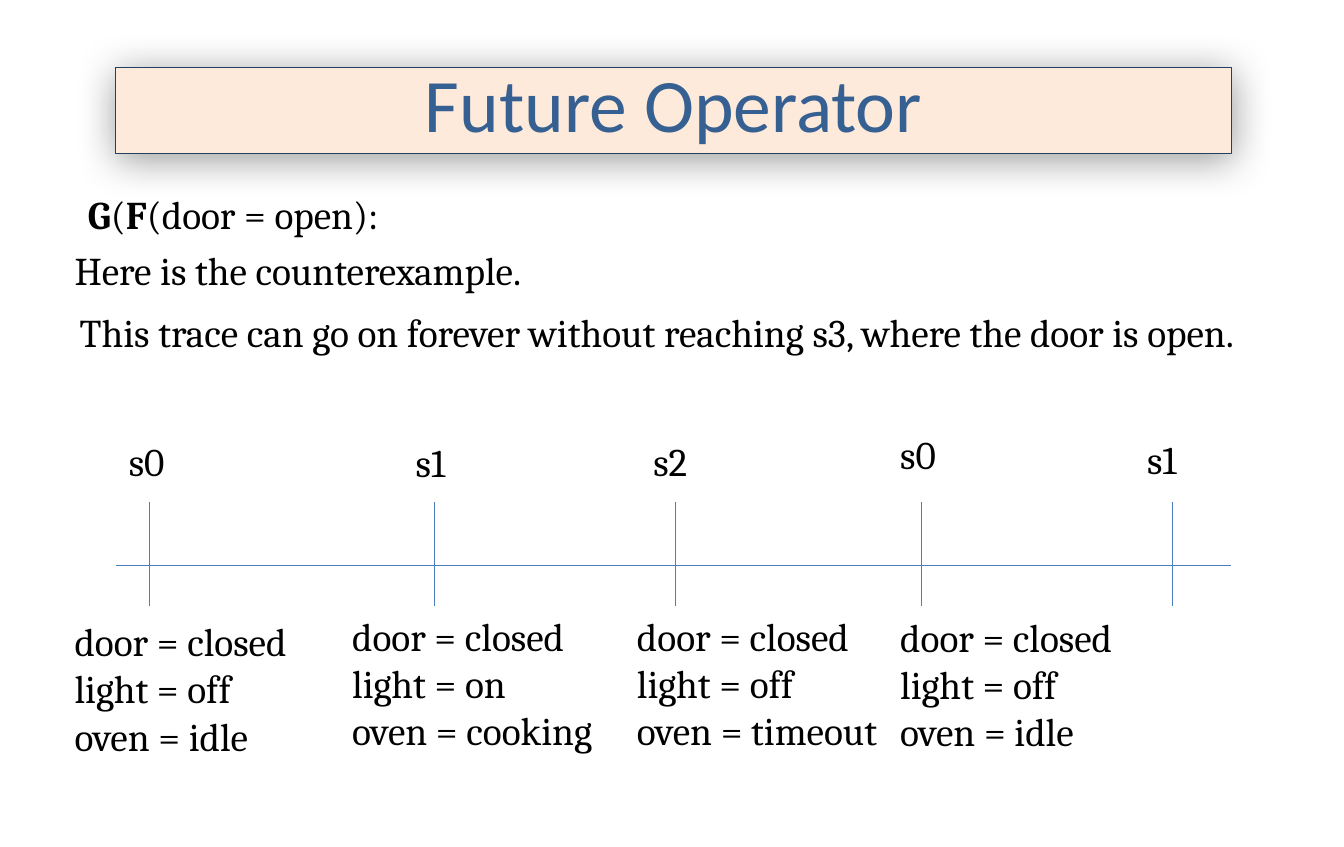
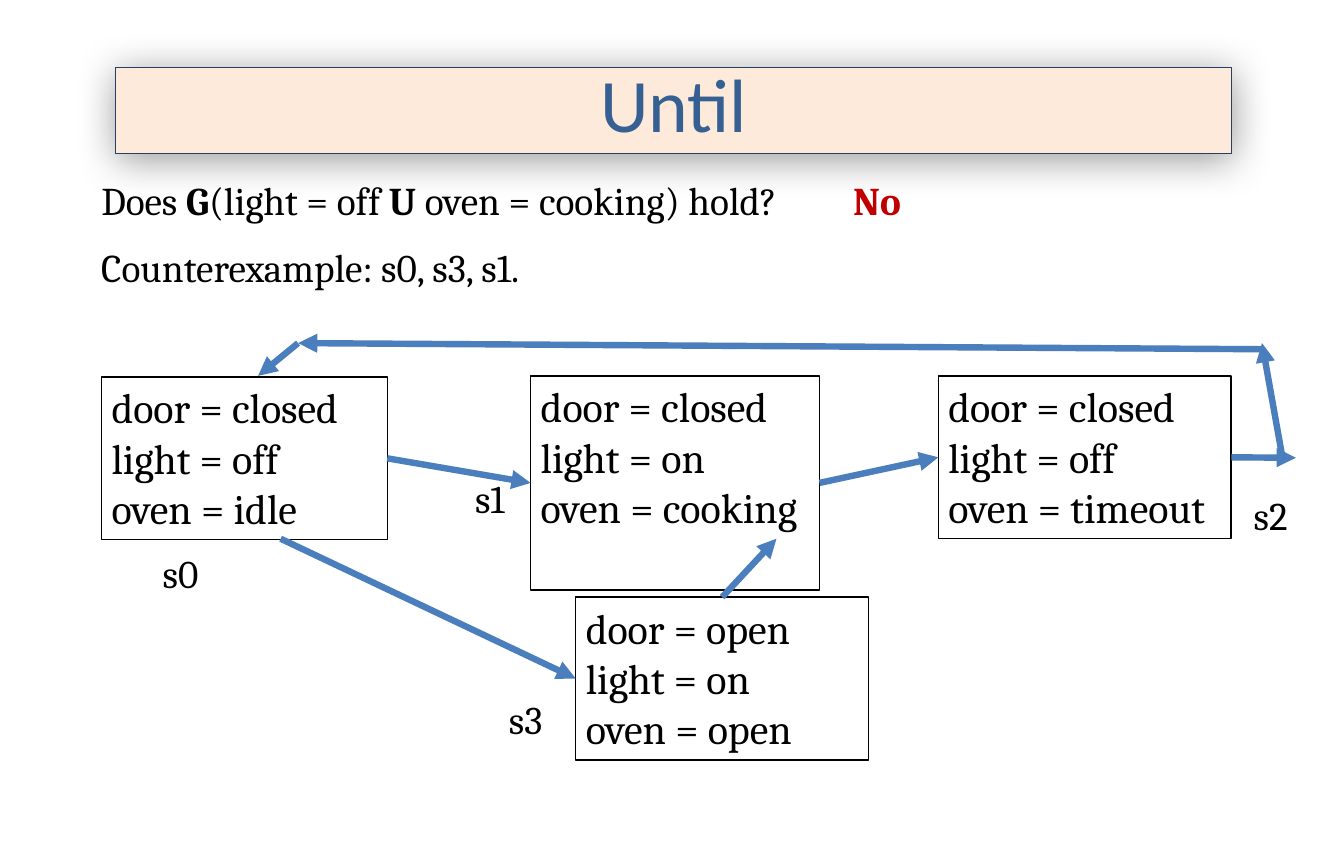
from dataclasses import dataclass

from lxml.etree import SubElement
from pptx import Presentation
from pptx.dml.color import RGBColor as RGB
from pptx.enum.shapes import MSO_CONNECTOR as CONN, MSO_SHAPE as SHAPE
from pptx.enum.text import MSO_ANCHOR as ANCHOR, PP_ALIGN as ALIGN
from pptx.oxml.ns import qn
from pptx.util import Inches, Pt

CELL = Inches(0.1)  # pitch of the grid of columns and rows
TOP, LEFT, BOTTOM, RIGHT = range(4)  # connection sites of a rectangle


@dataclass(frozen=True)
class Theme:
    ink: RGB = RGB(0x00, 0x00, 0x00)
    answer: RGB = RGB(0xC0, 0x00, 0x00)
    title: RGB = RGB(0x37, 0x60, 0x92)
    band: RGB = RGB(0xFD, 0xEA, 0xDA)
    band_edge: RGB = RGB(0x25, 0x40, 0x61)
    line: RGB = RGB(0x4B, 0x7E, 0xBC)
    title_font: str = "Calibri"
    body_font: str = "Cambria"
    title_size: float = 53.1
    body_size: float = 27.6
    state_size: float = 29.5
    edge: float = 1
    thin: float = 0.75
    thick: float = 4.5


def cells(*values):
    return [round(v * CELL) for v in values]


def soft_shadow(sp):
    effects = sp._element.spPr.find(qn("a:effectLst"))
    shadow = SubElement(effects, qn("a:outerShdw"), blurRad=str(Pt(28)),
                        dist=str(Pt(3)), dir="5400000", rotWithShape="0")
    color = SubElement(shadow, qn("a:srgbClr"), val="000000")
    SubElement(color, qn("a:alpha"), val="40000")


class Deck:
    def __init__(self, theme):
        self.theme = theme
        self.prs = Presentation()
        self.prs.slide_width, self.prs.slide_height = cells(131.2, 82.7)

    def slide(self, title):
        t = self.theme
        self.s = self.prs.slides.add_slide(self.prs.slide_layouts[6])
        sp = self.box((11.3, 6.6, 108.9, 8.4), t.band_edge)
        soft_shadow(sp)
        sp.fill.solid()
        sp.fill.fore_color.rgb = t.band
        self.set_text(sp, [title], t.title_size, t.title, t.title_font)
        sp.text_frame.vertical_anchor = ANCHOR.MIDDLE
        p = sp.text_frame.paragraphs[0]
        p.alignment, p.line_spacing = ALIGN.CENTER, 0.8

    def box(self, at, edge):
        sp = self.s.shapes.add_shape(SHAPE.RECTANGLE, *cells(*at))
        sp.shadow.inherit = False
        sp.fill.background()
        sp.line.color.rgb = edge
        sp.line.width = Pt(self.theme.edge)
        return sp

    def set_text(self, sp, lines, size, color, font):
        """Fill a shape; a line is a string or a list of (text, bold) runs."""
        tf = sp.text_frame
        tf.word_wrap = True
        tf.vertical_anchor = ANCHOR.TOP
        for i, line in enumerate(lines):
            p = tf.paragraphs[0] if i == 0 else tf.add_paragraph()
            p.alignment = ALIGN.LEFT
            for text, bold in [(line, False)] if isinstance(line, str) else line:
                r = p.add_run()
                r.text = text
                r.font.name, r.font.size, r.font.bold = font, Pt(size), bold
                r.font.color.rgb = color

    def text(self, x, y, w, *lines, color=None):
        t = self.theme
        height = 1 + 4.6 * len(lines)
        sp = self.s.shapes.add_textbox(*cells(x, y, w, height))
        self.set_text(sp, lines, t.body_size, color or t.ink, t.body_font)

    def label(self, name, x, y):
        self.text(x, y, 6.3, name)

    def state(self, at, *lines):
        t = self.theme
        sp = self.box(at, t.ink)
        self.set_text(sp, lines, t.state_size, t.ink, t.body_font)
        return sp

    def line(self, x1, y1, x2, y2, width=None):
        c = self.s.shapes.add_connector(CONN.STRAIGHT, *cells(x1, y1, x2, y2))
        c.line.color.rgb = self.theme.line
        c.line.width = Pt(width or self.theme.thin)
        SubElement(c._element.spPr, qn("a:effectLst"))
        return c

    def arrow(self, start, end):
        """Each end is a point (x, y) or a glued (shape, site)."""
        glued = [not isinstance(e[0], (int, float)) for e in (start, end)]
        points = [(0, 0) if g else e for g, e in zip(glued, (start, end))]
        c = self.line(*points[0], *points[1], width=self.theme.thick)
        if glued[0]:
            c.begin_connect(*start)
        if glued[1]:
            c.end_connect(*end)
        SubElement(c._element.spPr.find(qn("a:ln")), qn("a:tailEnd"), type="triangle")


def valuation(door, light, oven):
    return f"door = {door}", f"light = {light}", f"oven = {oven}"


IDLE = valuation("closed", "off", "idle")
COOKING = valuation("closed", "on", "cooking")
TIMEOUT = valuation("closed", "off", "timeout")
OPEN = valuation("open", "on", "open")


def future_slide(d):
    d.slide("Future Operator")
    d.text(7.6, 18.1, 116.7, [("G", True), ("(", False), ("F", True),
                              ("(door = open):", False)])
    d.text(6.3, 23.6, 116.7, "Here is the counterexample.")
    d.text(6.8, 29.6, 116.7, "This trace can go on forever without reaching s3, "
                             "where the door is open.")
    d.line(11.3, 55.2, 120.2, 55.2)
    for tick, name, x, y in [(14.6, "s0", 11.6, 42.2), (42.4, "s1", 39.6, 42.3),
                             (65.9, "s2", 62.8, 42.2), (90, "s0", 86.9, 41.5),
                             (114.5, "s1", 111, 42)]:
        d.line(tick, 49, tick, 59.2)
        d.label(name, x, y)
    for x, y, lines in [(6.3, 59.8, IDLE), (33.4, 59.3, COOKING),
                        (61.2, 59.3, TIMEOUT), (86.9, 59.4, IDLE)]:
        d.text(x, y, 26.6, *lines)


def until_slide(d):
    d.slide("Until")
    d.text(8.9, 16.7, 105.9, [("Does ", False), ("G", True), ("(light = off ", False),
                              ("U", True), (" oven = cooking) hold?", False)])
    d.text(82.3, 16.7, 12.1, [("No", True)], color=d.theme.answer)
    d.text(8.9, 23.3, 51.7, "Counterexample: s0, s3, s1.")

    s0 = d.state((9.9, 36.8, 27.9, 15.9), *IDLE)
    s1 = d.state((51.8, 36.7, 28.2, 20.9), *COOKING)
    s2 = d.state((91.6, 36.7, 28.6, 15.9), *TIMEOUT)
    s3 = d.state((56.2, 58.3, 28.6, 15.9), *OPEN)
    for start, end in [((s0, RIGHT), (s1, LEFT)),
                       ((s1, RIGHT), (s2, LEFT)),
                       ((27.4, 52.6), (s3, LEFT)),
                       ((s3, TOP), (75.8, 52.6)),
                       ((s2, RIGHT), (126.5, 44.7)),
                       ((125.2, 44.7), (123.2, 33.5)),
                       ((123.2, 34.1), (29.1, 33.5)),
                       ((29.1, 33.5), (25.2, 36.7))]:
        d.arrow(start, end)
    for name, x, y in [("s0", 14.9, 53.1), ("s1", 45.4, 45.8),
                       ("s2", 121.4, 47.5), ("s3", 48.7, 67.4)]:
        d.label(name, x, y)


def main():
    deck = Deck(Theme())
    future_slide(deck)
    until_slide(deck)
    deck.prs.save("out.pptx")


if __name__ == "__main__":
    main()
